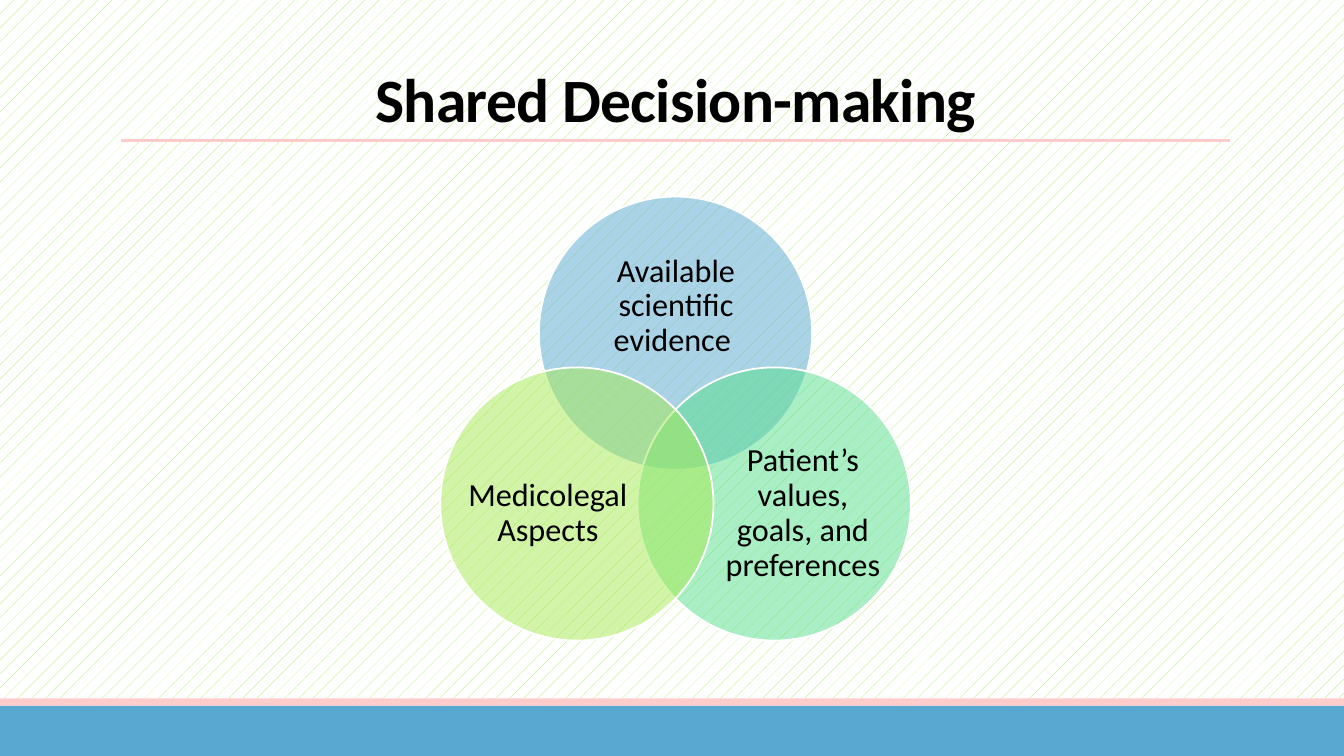
from math import cos, radians, sin

from lxml.etree import SubElement
from pptx import Presentation
from pptx.dml.color import RGBColor
from pptx.enum.dml import MSO_PATTERN
from pptx.enum.shapes import MSO_CONNECTOR, MSO_SHAPE
from pptx.enum.text import MSO_ANCHOR, MSO_AUTO_SIZE, PP_ALIGN
from pptx.oxml.ns import qn
from pptx.util import Inches, Pt

WIDE, HIGH = 13.33, 7.5
BLUE, PINK, GREEN, LIME = "59A8D1", "FFCCCC", "55DE8B", "A7EA52"
WHITE, BLACK = "FFFFFF", "000000"
FONT = "Calibri"

# Venn diagram: centre, distance of each circle from it, and diameter
MID_X, MID_Y = 6.7, 4.435
REACH, SIZE = 1.13, 2.71

# Angle, fill, label and label box of each circle
CIRCLES = [
    (-90, BLUE, "Available scientific evidence ", (5.71, 2.43, 1.99, 1.22)),
    (30, GREEN, "Patient’s values, goals, and preferences", (7.15, 4.35, 1.63, 1.49)),
    (150, LIME, "Medicolegal Aspects", (4.62, 4.35, 1.63, 1.49)),
]


def color(code):
    return RGBColor.from_string(code)


def place(box):
    return [Inches(side) for side in box]


def paint(slide):
    fill = slide.background.fill
    fill.patterned()
    fill.pattern = MSO_PATTERN.PERCENT_5
    fill.fore_color.rgb = color(LIME)
    fill.back_color.rgb = color(WHITE)


def add_shape(slide, kind, box, code):
    shape = slide.shapes.add_shape(kind, *place(box))
    shape.shadow.inherit = False
    shape.fill.solid()
    shape.fill.fore_color.rgb = color(code)
    shape.line.fill.background()
    return shape


def add_rule(slide, left, right, top):
    rule = slide.shapes.add_connector(
        MSO_CONNECTOR.STRAIGHT, *place((left, top, right, top)))
    rule.line.color.rgb = color(PINK)
    rule.line.width = Pt(2.25)
    SubElement(rule._element.spPr, qn("a:effectLst"))


def add_circle(slide, angle, code):
    turn = radians(angle)
    left = MID_X + REACH * cos(turn) - SIZE / 2
    top = MID_Y + REACH * sin(turn) - SIZE / 2
    disc = add_shape(slide, MSO_SHAPE.OVAL, (left, top, SIZE, SIZE), code)
    disc.line.color.rgb = color(WHITE)
    disc.line.width = Pt(1.25)
    # Half transparent, so that the overlaps show
    tint = disc._element.spPr.find(qn("a:solidFill"))[0]
    SubElement(tint, qn("a:alpha"), val="50000")


def add_text(frame, text, size, space, anchor, bold=False):
    frame.word_wrap = True
    frame.auto_size = MSO_AUTO_SIZE.NONE
    frame.vertical_anchor = anchor
    para = frame.paragraphs[0]
    para.alignment = PP_ALIGN.CENTER
    para.line_spacing = space
    run = para.add_run()
    run.text = text
    run.font.name = FONT
    run.font.size = Pt(size)
    run.font.bold = bold
    run.font.color.rgb = color(BLACK)
    return run


def add_title(slide, text, box):
    title = slide.shapes.title
    title.left, title.top, title.width, title.height = place(box)
    run = add_text(title.text_frame, text, 44, 0.85, MSO_ANCHOR.BOTTOM, True)
    run.font._element.set("spc", "-50")


def add_label(slide, text, box):
    frame = slide.shapes.add_textbox(*place(box)).text_frame
    frame.margin_left = frame.margin_right = 0
    frame.margin_top = frame.margin_bottom = 0
    add_text(frame, text, 23, 0.9, MSO_ANCHOR.MIDDLE)


def main():
    deck = Presentation()
    deck.slide_width, deck.slide_height = Inches(WIDE), Inches(HIGH)
    slide = deck.slides.add_slide(deck.slide_layouts[5])
    paint(slide)

    # Footer bands
    add_shape(slide, MSO_SHAPE.RECTANGLE, (0, 7, WIDE, 0.5), BLUE)
    add_shape(slide, MSO_SHAPE.RECTANGLE, (0, 6.93, WIDE, 0.07), PINK)

    # Title and its rule
    add_rule(slide, 1.2, 12.2, 1.39)
    add_title(slide, "Shared Decision-making", (1.2, 0.31, 11, 1.08))

    # Venn diagram
    for angle, code, text, box in CIRCLES:
        add_circle(slide, angle, code)
        add_label(slide, text, box)

    deck.save("out.pptx")


if __name__ == "__main__":
    main()
